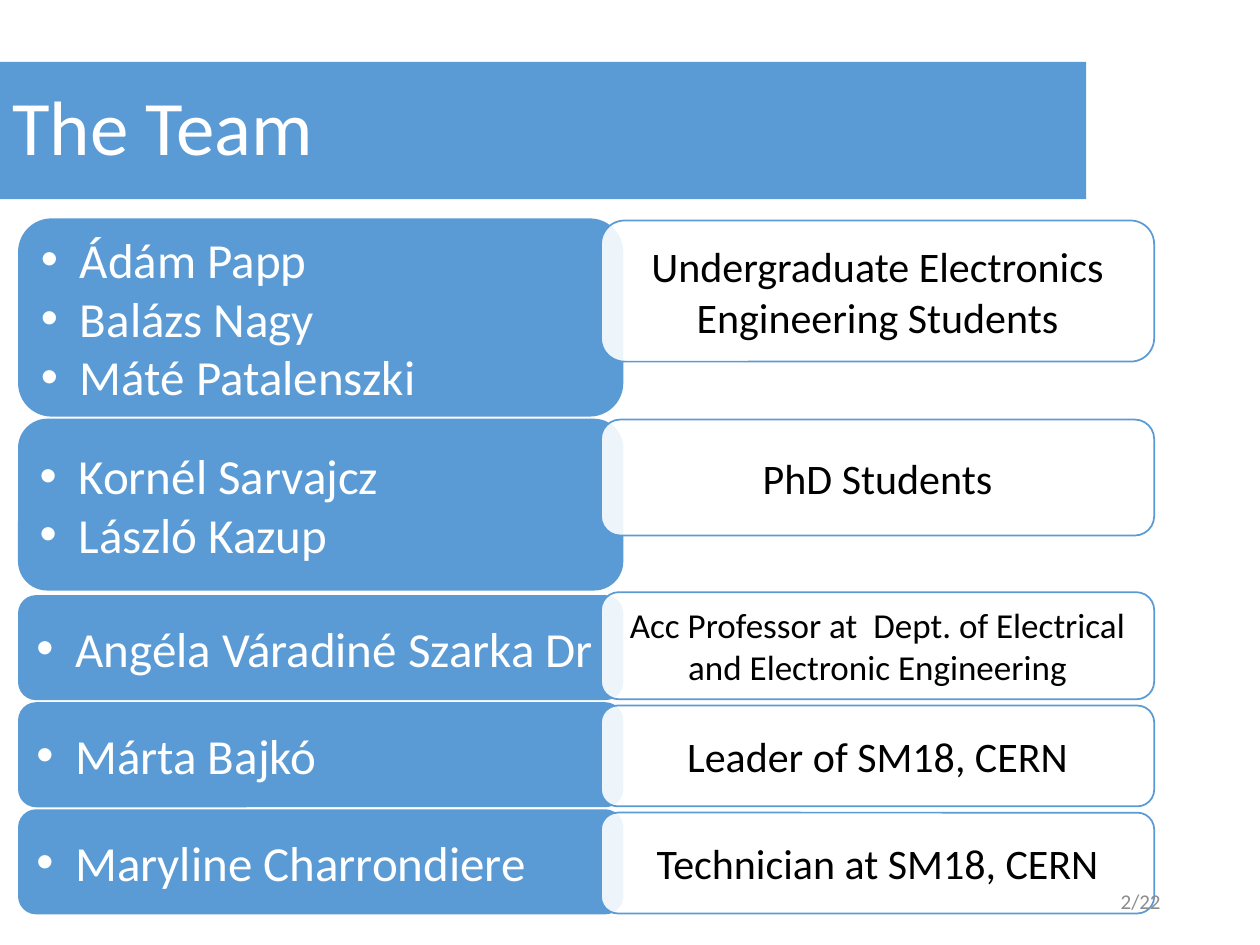
from dataclasses import dataclass

from lxml import etree
from pptx import Presentation
from pptx.dml.color import RGBColor
from pptx.enum.shapes import MSO_SHAPE
from pptx.enum.text import MSO_ANCHOR, PP_ALIGN
from pptx.oxml.ns import qn
from pptx.util import Inches, Pt

RECT, ROUND = MSO_SHAPE.RECTANGLE, MSO_SHAPE.ROUNDED_RECTANGLE
MIDDLE = MSO_ANCHOR.MIDDLE
LEFT, CENTER, RIGHT = PP_ALIGN.LEFT, PP_ALIGN.CENTER, PP_ALIGN.RIGHT


@dataclass(frozen=True)
class Theme:
    font: str = "Calibri"
    blue: RGBColor = RGBColor(0x5B, 0x9B, 0xD5)
    white: RGBColor = RGBColor(0xFF, 0xFF, 0xFF)
    black: RGBColor = RGBColor(0, 0, 0)
    gray: RGBColor = RGBColor(0x8C, 0x8C, 0x8C)
    title: int = 44
    name: int = 28
    role: int = 24
    long_role: int = 20
    number: int = 12


T = Theme()
NAMES_X, NAMES_W = 0.15, 4.79
ROLE_X, ROLE_W = 4.77, 4.39
INDENT = Inches(0.31)

# Names, their top and height; role, its top, height and type size
TEAM = [
    (["Ádám Papp", "Balázs Nagy", "Máté Patalenszki"], 1.74, 1.56,
     "Undergraduate Electronics Engineering Students", 1.75, 1.12, T.role),
    (["Kornél Sarvajcz", "László Kazup"], 3.33, 1.35,
     "PhD Students", 3.33, 0.92, T.role),
    (["Angéla Váradiné Szarka Dr"], 4.73, 0.82,
     "Acc Professor at  Dept. of Electrical and Electronic Engineering",
     4.7, 0.85, T.long_role),
    (["Márta Bajkó"], 5.58, 0.82,
     "Leader of SM18, CERN", 5.6, 0.8, T.role),
    (["Maryline Charrondiere"], 6.43, 0.82,
     "Technician at SM18, CERN", 6.45, 0.8, T.role),
]


def add_box(slide, kind, box, fill, line=None):
    sp = slide.shapes.add_shape(kind, *map(Inches, box))
    sp.shadow.inherit = False
    sp.fill.solid()
    sp.fill.fore_color.rgb = fill
    if line is None:
        sp.line.fill.background()
    else:
        sp.line.color.rgb = line
        sp.line.width = Pt(1)
    return sp


def add_bullet(p):
    pPr = p._p.get_or_add_pPr()
    pPr.set("marL", str(INDENT))
    pPr.set("indent", str(-INDENT))
    etree.SubElement(pPr, qn("a:buFont")).set("typeface", "Arial")
    etree.SubElement(pPr, qn("a:buChar")).set("char", "•")


def write(sp, lines, size, color, align=LEFT, bullets=False):
    tf = sp.text_frame
    tf.word_wrap = True
    tf.vertical_anchor = MIDDLE
    for i, text in enumerate(lines):
        p = tf.add_paragraph() if i else tf.paragraphs[0]
        p.alignment = align
        if bullets:
            add_bullet(p)
        r = p.add_run()
        r.text = text
        r.font.name = T.font
        r.font.size = Pt(size)
        r.font.color.rgb = color


def add_title(slide, box, text):
    sp = add_box(slide, RECT, box, T.blue)
    write(sp, [text], T.title, T.white)
    sp.text_frame.paragraphs[0].line_spacing = 0.9


def add_names(slide, box, names):
    sp = add_box(slide, ROUND, box, T.blue, T.blue)
    write(sp, names, T.name, T.white, bullets=True)


def add_role(slide, box, role, size):
    sp = add_box(slide, ROUND, box, T.white, T.blue)
    # Slightly transparent, so the names box shows through
    color = sp._element.spPr.find(qn("a:solidFill"))[0]
    etree.SubElement(color, qn("a:alpha")).set("val", "90000")
    write(sp, [role], size, T.black, CENTER)


def add_page_number(slide, box, text):
    sp = slide.shapes.add_textbox(*map(Inches, box))
    write(sp, [text], T.number, T.gray, RIGHT)


def main():
    prs = Presentation()
    prs.slide_width, prs.slide_height = Inches(10), Inches(7.5)
    slide = prs.slides.add_slide(prs.slide_layouts[6])

    add_title(slide, (0, 0.49, 8.62, 1.09), "The Team")
    for names, names_y, names_h, role, role_y, role_h, size in TEAM:
        add_names(slide, (NAMES_X, names_y, NAMES_W, names_h), names)
        add_role(slide, (ROLE_X, role_y, ROLE_W, role_h), role, size)
    add_page_number(slide, (7.06, 6.95, 2.25, 0.4), "2/22")

    prs.save("out.pptx")


if __name__ == "__main__":
    main()
